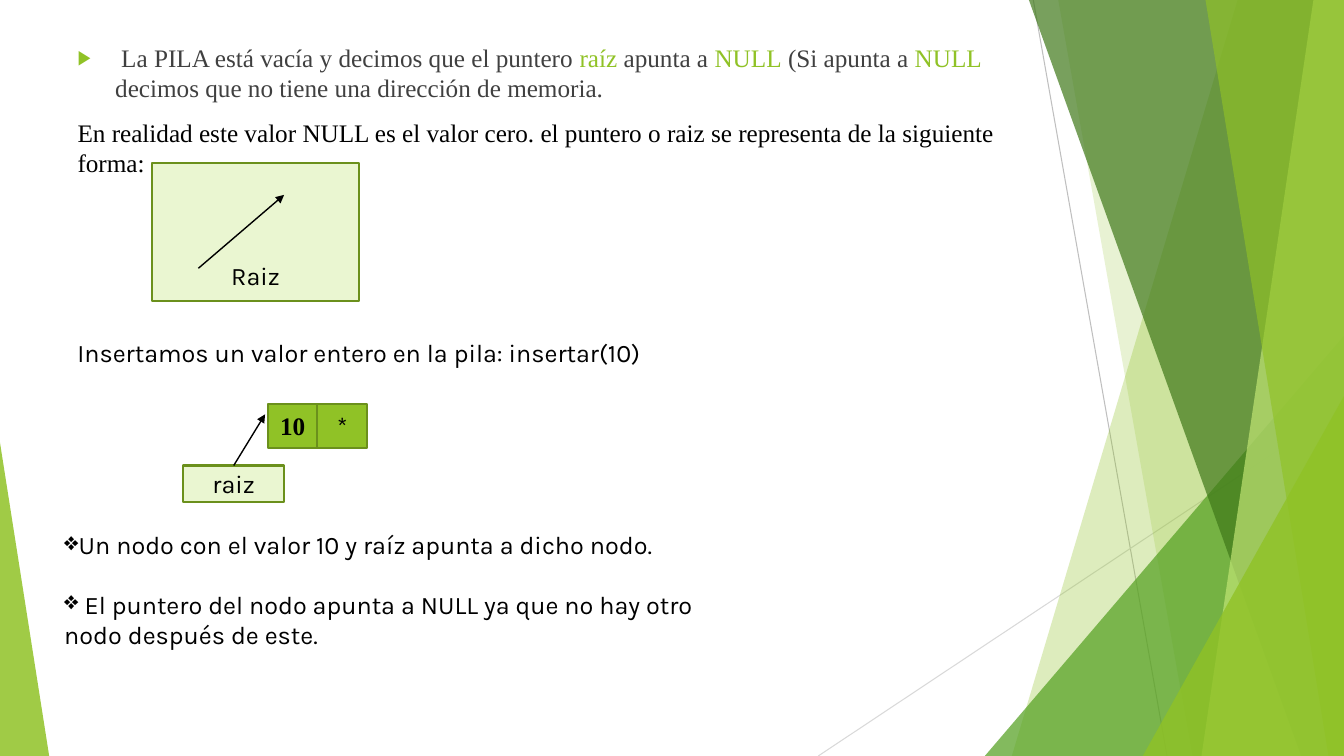
from lxml.etree import SubElement
from pptx import Presentation
from pptx.dml.color import RGBColor
from pptx.enum.shapes import MSO_CONNECTOR, MSO_SHAPE
from pptx.enum.text import MSO_ANCHOR, MSO_AUTO_SIZE, PP_ALIGN
from pptx.oxml.ns import qn
from pptx.util import Cm, Pt

WIDTH, HEIGHT = 33.87, 19.05
COLOURS = {
    "green": "90C226", "dark_green": "3F7819", "mid_green": "54A021",
    "light_green": "C0E474", "pale": "EAF6D1", "border": "6B901C",
    "black": "000000", "body": "404040", "grey": "BFBFBF", "light_grey": "D9D9D9",
}
SANS, SERIF = "Karla", "Times New Roman"


def colour(name):
    return RGBColor.from_string(COLOURS[name])


class SlideBuilder:
    """Holds the text style and the slide being filled; lengths are in cm."""

    def __init__(self, slide, size=18):
        self.slide = slide
        self.shapes = slide.shapes
        self.size = Pt(size)

    def run(self, paragraph, text, font=SANS, ink="black", bold=False):
        run = paragraph.add_run()
        run.text = text
        run.font.name, run.font.size, run.font.bold = font, self.size, bold
        run.font.color.rgb = colour(ink)

    def bullet(self, paragraph, character=None, indent=0, ink=None, percent=None):
        properties = paragraph._p.get_or_add_pPr()
        properties.set("marL", str(Cm(indent)))
        properties.set("indent", str(-Cm(indent)))
        if ink:
            bullet_colour = SubElement(properties, qn("a:buClr"))
            SubElement(bullet_colour, qn("a:srgbClr"), val=COLOURS[ink])
        if percent:
            SubElement(properties, qn("a:buSzPct"), val=str(percent * 1000))
        if character:
            SubElement(properties, qn("a:buChar"), char=character)
        else:
            SubElement(properties, qn("a:buNone"))

    def paint(self, shape, fill, opacity=100, border=None):
        shape.shadow.inherit = False
        shape.fill.solid()
        shape.fill.fore_color.rgb = colour(fill)
        if opacity < 100:
            tint = shape.fill._xPr.find(".//" + qn("a:srgbClr"))
            SubElement(tint, qn("a:alpha"), val=str(opacity * 1000))
        if border:
            shape.line.color.rgb = colour(border)
            shape.line.width = Pt(1.5)
        else:
            shape.line.fill.background()

    def band(self, top_x, bottom_x, fill, opacity):
        """Slanted band that runs from its left edge to the slide's right side."""
        builder = self.shapes.build_freeform(Cm(top_x), 0)
        corners = [(WIDTH, 0), (WIDTH, HEIGHT), (bottom_x, HEIGHT)]
        builder.add_line_segments([(Cm(x), Cm(y)) for x, y in corners])
        self.paint(builder.convert_to_shape(), fill, opacity)

    def corner(self, left, top, width, apex, fill, opacity):
        """Triangle that stands on the slide's bottom edge."""
        shape = self.shapes.add_shape(MSO_SHAPE.ISOSCELES_TRIANGLE, Cm(left), Cm(top),
                                      Cm(width), Cm(HEIGHT - top))
        shape.adjustments[0] = apex
        self.paint(shape, fill, opacity)

    def line(self, start, end, ink, width, arrow=False):
        connector = self.shapes.add_connector(
            MSO_CONNECTOR.STRAIGHT, *(Cm(value) for value in start + end))
        connector.line.color.rgb = colour(ink)
        connector.line.width = Pt(width)
        if arrow:
            SubElement(connector.line._get_or_add_ln(), qn("a:tailEnd"), type="triangle")
        SubElement(connector._element.spPr, qn("a:effectLst"))
        return connector

    def box(self, left, top, width, height, text, fill="pale",
            anchor=MSO_ANCHOR.MIDDLE, **style):
        shape = self.shapes.add_shape(MSO_SHAPE.RECTANGLE, Cm(left), Cm(top),
                                      Cm(width), Cm(height))
        self.paint(shape, fill, border="border")
        frame = shape.text_frame
        frame.word_wrap = True
        frame.vertical_anchor = anchor
        frame.paragraphs[0].alignment = PP_ALIGN.CENTER
        self.run(frame.paragraphs[0], text, **style)
        return shape

    def text(self, left, top, width, height, lines, bullet=None, gap=0):
        frame = self.shapes.add_textbox(Cm(left), Cm(top), Cm(width), Cm(height)).text_frame
        frame.word_wrap = True
        for index, line in enumerate(lines):
            paragraph = frame.add_paragraph() if index else frame.paragraphs[0]
            paragraph.space_before = Pt(gap if index else 0)
            self.bullet(paragraph, bullet)
            self.run(paragraph, line)

    def body(self, left, top, width, height):
        """Moves the body placeholder in front and returns its text frame."""
        title = self.shapes.title._element
        title.getparent().remove(title)
        shape = self.slide.placeholders[1]
        shape.left, shape.top = Cm(left), Cm(top)
        shape.width, shape.height = Cm(width), Cm(height)
        shape._element.getparent().append(shape._element)
        shape.text_frame.auto_size = MSO_AUTO_SIZE.NONE
        return shape.text_frame


def main():
    presentation = Presentation()
    presentation.slide_width, presentation.slide_height = Cm(WIDTH), Cm(HEIGHT)
    builder = SlideBuilder(presentation.slides.add_slide(presentation.slide_layouts[1]))

    # Green facets
    builder.line((26.04, 0), (29.41, HEIGHT), "grey", 0.75)
    builder.line((WIDTH, 10.24), (20.62, HEIGHT), "light_grey", 0.75)
    builder.band(31.19, 25.5, "green", 30)
    builder.band(26.67, 30.05, "green", 20)
    builder.corner(24.82, 8.46, 9.05, 1, "mid_green", 72)
    builder.band(25.93, 32.79, "dark_green", 70)
    builder.band(33.1, 30.28, "light_green", 70)
    builder.band(30.38, 33.48, "green", 65)
    builder.corner(28.8, 9.98, 5.07, 1, "green", 80)
    builder.corner(0, 11.15, 1.24, 0, "green", 85)

    # Empty stack explanation
    frame = builder.body(1.7, 0.94, 23.88, 10.77)
    empty_stack, null_value = frame.paragraphs[0], frame.add_paragraph()
    for paragraph in (empty_stack, null_value):
        paragraph.space_before = Pt(10)
    builder.bullet(empty_stack, "▶", 0.95, "green", 80)
    builder.run(empty_stack, " ", ink="body")
    for text, ink in [
        ("La PILA está vacía y decimos que el puntero ", "body"),
        ("raíz", "green"), (" apunta a ", "body"), ("NULL", "green"),
        (" (Si apunta a ", "body"), ("NULL", "green"),
        (" decimos que no tiene una dirección de memoria.", "body"),
    ]:
        builder.run(empty_stack, text, SERIF, ink)
    builder.bullet(null_value)
    builder.run(null_value, "En realidad este valor NULL es el valor cero. el puntero o raiz "
                "se representa de la siguiente forma:", SERIF)

    # Root pointer
    root = builder.box(3.84, 4.1, 5.2, 3.48, "Raiz", anchor=MSO_ANCHOR.BOTTOM)
    root.text_frame.margin_bottom = Cm(0.25)
    builder.line((5, 6.76), (7.16, 4.91), "black", 1, arrow=True)

    # Insertion text
    builder.text(1.7, 8.38, 16.94, 1.8,
                 ["Insertamos un valor entero en la pila: insertar(10)"])
    builder.text(1.37, 13.21, 16.94, 3.33,
                 ["Un nodo con el valor 10 y raíz apunta a dicho nodo.",
                  " El puntero del nodo apunta a NULL ya que no hay otro nodo después de este."],
                 bullet="❖", gap=21)

    # Node with its value and its pointer
    cell_width = 1.25
    for index, (text, font, bold) in enumerate([("10", SERIF, True), ("*", SANS, False)]):
        builder.box(6.75 + index * cell_width, 10.18, cell_width, 1.1, text, "green",
                    font=font, bold=bold)
    pointer = builder.box(4.62, 11.73, 2.54, 0.92, "raiz")
    arrow = builder.line((5.89, 11.73), (6.68, 10.44), "black", 1, arrow=True)
    arrow.begin_connect(pointer, 0)

    presentation.save("out.pptx")


if __name__ == "__main__":
    main()
